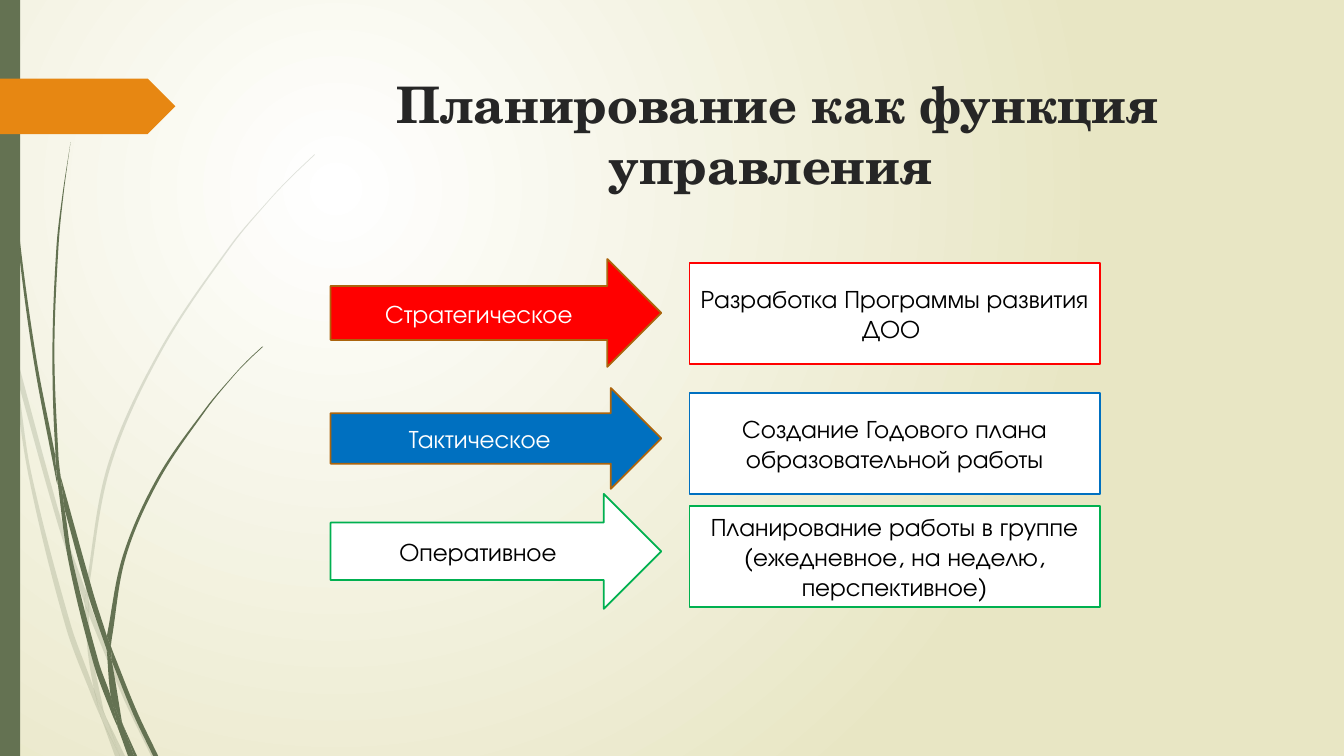
"""Builds a slide on planning as a management function."""
from dataclasses import dataclass
from math import hypot

from lxml import etree
from pptx import Presentation
from pptx.dml.color import RGBColor
from pptx.enum.shapes import MSO_SHAPE
from pptx.enum.text import MSO_ANCHOR, PP_ALIGN
from pptx.oxml.ns import qn
from pptx.util import Inches, Pt

RECTANGLE = MSO_SHAPE.RECTANGLE
RIGHT_ARROW = MSO_SHAPE.RIGHT_ARROW
TAG = MSO_SHAPE.PENTAGON
CENTER = PP_ALIGN.CENTER
TOP, MIDDLE = MSO_ANCHOR.TOP, MSO_ANCHOR.MIDDLE


@dataclass(frozen=True)
class Theme:
    """Colours, fonts and type sizes of the slide."""
    white: str = "FFFFFF"
    black: str = "000000"
    sand: str = "E8E6C4"
    grass: str = "647252"
    orange: str = "E78712"
    bronze: str = "AB640D"
    heading: str = "262626"
    red: str = "FF0000"
    blue: str = "0070C0"
    green: str = "00B050"
    title_font: str = "TeX Gyre Schola"
    body_font: str = "TeX Gyre Adventor"
    title_size: int = 36
    body_size: int = 18
    outline: float = 1.25
    pale_alpha: int = 20


THEME = Theme()

PALE_GRASS = [
    ([(.11, 3.5), (.09, 3.22), (0, 2.82)], [(0, 2.99), (.1, 3.44), (.11, 3.5)]),
    ([(.17, 3.76), (.58, 5.22), (.84, 5.99)], [(.85, 5.86), (.62, 5.2), (.14, 3.45)]),
    ([(.88, 6.1), (1.23, 6.94), (1.5, 7.5)], [(1.55, 7.5), (1.27, 6.92), (.92, 6.07), (.88, 5.96)]),
    ([(1.05, 7.11), (1.19, 7.5)], [(1.24, 7.5), (1.05, 7.11)]),
    ([(.11, 3.5), (.28, 4.7), (.65, 6.21), (.92, 6.93), (1.01, 7.14)],
     [(.99, 7.07), (.93, 6.83), (.7, 6.19), (.31, 4.69), (.17, 3.76), (.11, 3.5)]),
    ([(.84, 5.99), (.87, 6.46), (.93, 6.83), (.96, 6.92), (1.05, 7.11)],
     [(1.03, 7.06), (.91, 6.46), (.88, 6.1), (.88, 6.08), (.84, 5.99)]),
    ([(.88, 5.96), (.88, 5.84), (1.1, 4.62), (1.6, 3.49), (2.29, 2.45), (2.68, 1.98),
      (2.9, 1.75), (3.12, 1.54)],
     [(3.12, 1.53), (2.89, 1.75), (2.68, 1.97), (2.28, 2.44), (1.58, 3.48), (1.07, 4.61),
      (.85, 5.84), (.85, 5.86)]),
    ([(1.01, 7.14), (1.14, 7.5)], [(1.19, 7.5), (1.01, 7.14)]),
    ([(.85, 5.86), (.84, 5.99), (.88, 6.08)], [(.88, 6.1), (.88, 5.96), (.85, 5.86)]),
    ([(.93, 6.83), (.99, 7.07), (1.01, 7.14), (1.19, 7.5)],
     [(1.19, 7.5), (1.05, 7.11), (.96, 6.92), (.93, 6.83)]),
]
DARK_GRASS = [
    ([(.03, 0), (.04, .48), (.07, 1.1), (.17, 2.33), (.33, 3.55), (.56, 4.77), (.57, 4.81)],
     [(.55, 4.57), (.55, 4.53), (.36, 3.55), (.19, 2.32), (.08, 1.09), (.05, .48), (.04, 0)]),
    ([(.64, 5.05), (.88, 5.92), (1.06, 6.45)], [(1.06, 6.33), (1.06, 6.31), (.93, 5.9), (.6, 4.72)]),
    ([(1.11, 6.56), (1.32, 7.08), (1.52, 7.5)], [(1.57, 7.5), (1.36, 7.06), (1.13, 6.49), (1.1, 6.41)]),
    ([(.57, 4.77), (.68, 5.57), (.93, 6.59), (1.11, 7.08), (1.17, 7.22)],
     [(1.16, 7.17), (1.1, 6.91), (.98, 6.57), (.72, 5.56), (.64, 5.05), (.57, 4.77)]),
    ([(.6, 4.72), (.58, 4.53), (.54, 3.49), (.58, 2.45), (.63, 1.93), (.7, 1.41)],
     [(.7, 1.41), (.62, 1.93), (.56, 2.45), (.52, 3.49), (.55, 4.49), (.6, 4.72)]),
    ([(1.22, 7.19), (1.33, 7.5)], [(1.36, 7.5), (1.22, 7.19)]),
    ([(.55, 4.53), (.57, 4.77), (.64, 5.05)], [(.6, 4.72), (.55, 4.49)]),
    ([(1.1, 6.41), (1.11, 6.33), (1.25, 5.52), (1.58, 4.76), (2.05, 4.06), (2.31, 3.74),
      (2.45, 3.59), (2.61, 3.44)],
     [(2.6, 3.44), (2.45, 3.58), (2.31, 3.73), (2.04, 4.05), (1.56, 4.74), (1.22, 5.51),
      (1.06, 6.31)]),
    ([(1.17, 7.22), (1.27, 7.5)], [(1.31, 7.5), (1.17, 7.22)]),
    ([(1.06, 6.45), (1.1, 6.91), (1.16, 7.06), (1.22, 7.19)],
     [(1.21, 7.16), (1.11, 6.56), (1.09, 6.51), (1.06, 6.45)]),
    ([(1.06, 6.31), (1.06, 6.45), (1.09, 6.51), (1.11, 6.56)], [(1.1, 6.41), (1.06, 6.31)]),
    ([(1.1, 6.91), (1.16, 7.17), (1.17, 7.22), (1.3, 7.5)],
     [(1.33, 7.5), (1.22, 7.19), (1.16, 7.06), (1.1, 6.91)]),
]


def style(shape, fill, line=None):
    """Give a shape a plain fill and an optional outline."""
    shape.shadow.inherit = False
    shape.fill.solid()
    shape.fill.fore_color.rgb = RGBColor.from_string(fill)
    if line:
        shape.line.color.rgb = RGBColor.from_string(line)
        shape.line.width = Pt(THEME.outline)
    else:
        shape.line.fill.background()


def write(shape, text, font, size, color, anchor, bold=False):
    """Put centred text into a shape."""
    frame = shape.text_frame
    frame.word_wrap = True
    frame.vertical_anchor = anchor
    frame.text = text
    frame.paragraphs[0].alignment = CENTER
    for run in frame.paragraphs[0].runs:
        run.font.name, run.font.size, run.font.bold = font, Pt(size), bold
        run.font.color.rgb = RGBColor.from_string(color)


def add_block(slide, kind, box, fill, line=None):
    """Add a preset shape at a box given in inches."""
    block = slide.shapes.add_shape(kind, *map(Inches, box))
    style(block, fill, line)
    return block


def paint_background(slide):
    """Fill the background with a glow centred in its upper left quarter."""
    fill = slide.background.fill
    fill.gradient()
    for stop, color in zip(fill.gradient_stops, (THEME.white, THEME.sand)):
        stop.color.rgb = RGBColor.from_string(color)
    gradient = slide.element.find(".//" + qn("a:gradFill"))
    glow = etree.Element(qn("a:path"), {"path": "circle"})
    etree.SubElement(glow, qn("a:fillToRect"), l="50000", t="50000", r="100000", b="100000")
    gradient.replace(gradient.find(qn("a:lin")), glow)


def bend(knots):
    """Return two handles and an end point for each curve through the knots."""
    padded = [knots[0], *knots, knots[-1]]
    points = []
    for a, b, c, d in zip(padded, padded[1:], padded[2:], padded[3:]):
        reach = hypot(c[0] - b[0], c[1] - b[1]) / 3
        for (x, y), start, end, sign in ((b, a, c, 1), (c, b, d, -1)):
            dx, dy = end[0] - start[0], end[1] - start[1]
            scale = sign * reach / (hypot(dx, dy) or 1)
            points.append((x + dx * scale, y + dy * scale))
        points.append(c)
    return points


def add_blade(group, left, top, sides, alpha):
    """Draw one piece of grass between two curved sides."""
    out, back = sides
    outline = [out[0], *bend(out), *bend([out[-1], back[0]]), *bend(back)]
    spots = [(Inches(left + x), Inches(top + y)) for x, y in outline]
    builder = group.shapes.build_freeform(*spots[0])
    builder.add_line_segments(spots[1:], close=True)
    blade = builder.convert_to_shape()
    style(blade, THEME.grass)
    lines = list(blade.element.iter(qn("a:lnTo")))
    for first in range(0, len(lines), 3):
        curve = etree.Element(qn("a:cubicBezTo"))
        lines[first].addprevious(curve)
        for line in lines[first:first + 3]:
            curve.append(line[0])
            line.getparent().remove(line)
    if alpha < 100:
        color = blade.element.find(".//" + qn("a:srgbClr"))
        etree.SubElement(color, qn("a:alpha"), val=str(alpha * 1000))


def add_side_decor(slide, left, top, height):
    """Draw the grass, the side strip and the orange tag."""
    for grass, alpha in ((PALE_GRASS, THEME.pale_alpha), (DARK_GRASS, 100)):
        tuft = slide.shapes.add_group_shape()
        for sides in grass:
            add_blade(tuft, left, top, sides, alpha)
    add_block(slide, RECTANGLE, (left, top, .2, height), THEME.grass)
    add_block(slide, TAG, (left, top + .78, 1.74, .55), THEME.orange)


def add_title(slide, left, top, width, height):
    """Place the heading in the title placeholder."""
    title = slide.shapes.title
    title.left, title.top, title.width, title.height = map(Inches, (left, top, width, height))
    write(title, "Планирование как функция управления ", THEME.title_font,
          THEME.title_size, THEME.heading, TOP, bold=True)


def add_planning_levels(slide, left, top, width):
    """Pair each planning level's arrow with the box for its result."""
    arrow_width, result_width, result_height = 3.28, 4.07, 1
    levels = [
        ("Стратегическое ", 0, 1.07, THEME.red, THEME.bronze, THEME.white,
         "Разработка Программы развития ДОО ", .04, THEME.red),
        ("Тактическое ", 1.28, 1, THEME.blue, THEME.bronze, THEME.white,
         "Создание Годового плана образовательной работы", 1.33, THEME.blue),
        ("Оперативное ", 2.33, 1.14, THEME.white, THEME.green, THEME.black,
         "Планирование работы в группе (ежедневное, на неделю, перспективное)", 2.45, THEME.green)]
    for level, arrow_top, arrow_height, fill, line, ink, result, result_top, frame in levels:
        arrow = add_block(slide, RIGHT_ARROW,
                          (left, top + arrow_top, arrow_width, arrow_height), fill, line)
        write(arrow, level, THEME.body_font, THEME.body_size, ink, MIDDLE)
        outcome = add_block(slide, RECTANGLE, (left + width - result_width, top + result_top,
                                               result_width, result_height), THEME.white, frame)
        write(outcome, result, THEME.body_font, THEME.body_size, THEME.black, MIDDLE)


deck = Presentation()
deck.slide_width, deck.slide_height = Inches(40 / 3), Inches(7.5)
planning = deck.slides.add_slide(deck.slide_layouts[5])
paint_background(planning)
add_side_decor(planning, 0, 0, 7.5)
add_title(planning, 2.84, .68, 9.75, 1.4)
add_planning_levels(planning, 3.28, 2.57, 7.63)
deck.save("out.pptx")
